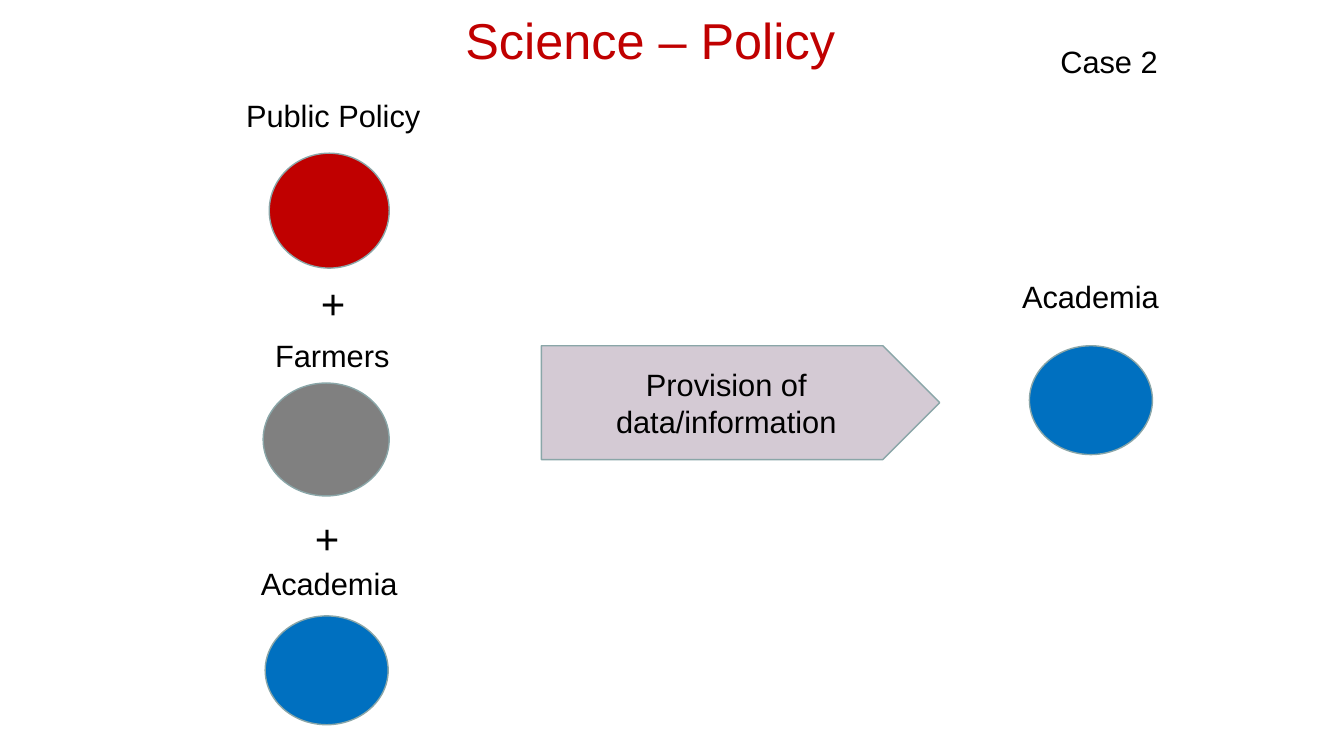
from pptx import Presentation
from pptx.dml.color import RGBColor
from pptx.enum.shapes import MSO_SHAPE as Preset
from pptx.enum.text import MSO_ANCHOR as Anchor, PP_ALIGN as Align
from pptx.util import Inches, Pt

COLOURS = {
    "text": "000000",
    "policy": "C00000",
    "farmers": "808080",
    "academia": "0070C0",
    "arrow": "D4CAD4",
    "outline": "8AA6A8",
}


class SlideBuilder:
    """Draws on one slide; centres and sizes are in half-inch columns and rows."""

    cell = 0.5
    font = "Arial"
    body_size = 22

    def __init__(self, deck):
        self.slide = deck.slides.add_slide(deck.slide_layouts[6])

    def frame(self, column, row, columns, rows):
        """Turn a centre and a size into left, top, width and height."""
        edges = (column - columns / 2, row - rows / 2, columns, rows)
        return [Inches(edge * self.cell) for edge in edges]

    def add_text(self, box, text, size, colour):
        box.text_frame.vertical_anchor = Anchor.MIDDLE
        para = box.text_frame.paragraphs[0]
        para.alignment = Align.CENTER
        span = para.add_run()
        span.text = text
        span.font.name = self.font
        span.font.size = Pt(size)
        span.font.color.rgb = RGBColor.from_string(COLOURS[colour])

    def label(self, text, column, row, columns, rows=0.94, size=body_size, colour="text"):
        box = self.slide.shapes.add_textbox(*self.frame(column, row, columns, rows))
        box.text_frame.word_wrap = False
        self.add_text(box, text, size, colour)

    def shape(self, preset, colour, column, row, columns, rows):
        shape = self.slide.shapes.add_shape(preset, *self.frame(column, row, columns, rows))
        shape.shadow.inherit = False
        shape.fill.solid()
        shape.fill.fore_color.rgb = RGBColor.from_string(COLOURS[colour])
        shape.line.color.rgb = RGBColor.from_string(COLOURS["outline"])
        shape.line.width = Pt(1)
        return shape

    def circle(self, colour, column, row, columns, rows):
        self.shape(Preset.OVAL, colour, column, row, columns, rows)

    def arrow(self, text, column, row, columns, rows):
        arrow = self.shape(Preset.PENTAGON, "arrow", column, row, columns, rows)
        arrow.text_frame.word_wrap = True
        self.add_text(arrow, text, self.body_size, "text")


def main():
    deck = Presentation()
    deck.slide_width, deck.slide_height = Inches(13.33), Inches(7.5)
    page = SlideBuilder(deck)

    page.label("Science – Policy", 12.9, 0.78, 24, 1.4, size=36, colour="policy")
    page.label("Case 2", 22, 1.21, 2.36)

    actors = [
        ("Public Policy", (6.61, 2.29, 3.9), "policy", (6.53, 4.18, 2.38, 2.28)),
        ("Farmers", (6.59, 7.05, 2.7), "farmers", (6.47, 8.72, 2.5, 2.24)),
        ("Academia", (6.53, 11.57, 3.14), "academia", (6.48, 13.3, 2.44, 2.16)),
        ("Academia", (21.63, 5.87, 3.14), "academia", (21.64, 7.94, 2.44, 2.16)),
    ]
    for name, label_place, colour, circle_place in actors:
        page.label(name, *label_place)
        page.circle(colour, *circle_place)

    for column, row in [(6.61, 6.01), (6.49, 10.67)]:
        page.label("+", column, row, 0.9, 1.22, size=30)

    page.arrow("Provision of data/information", 14.69, 7.99, 7.9, 2.26)
    deck.save("out.pptx")


if __name__ == "__main__":
    main()
